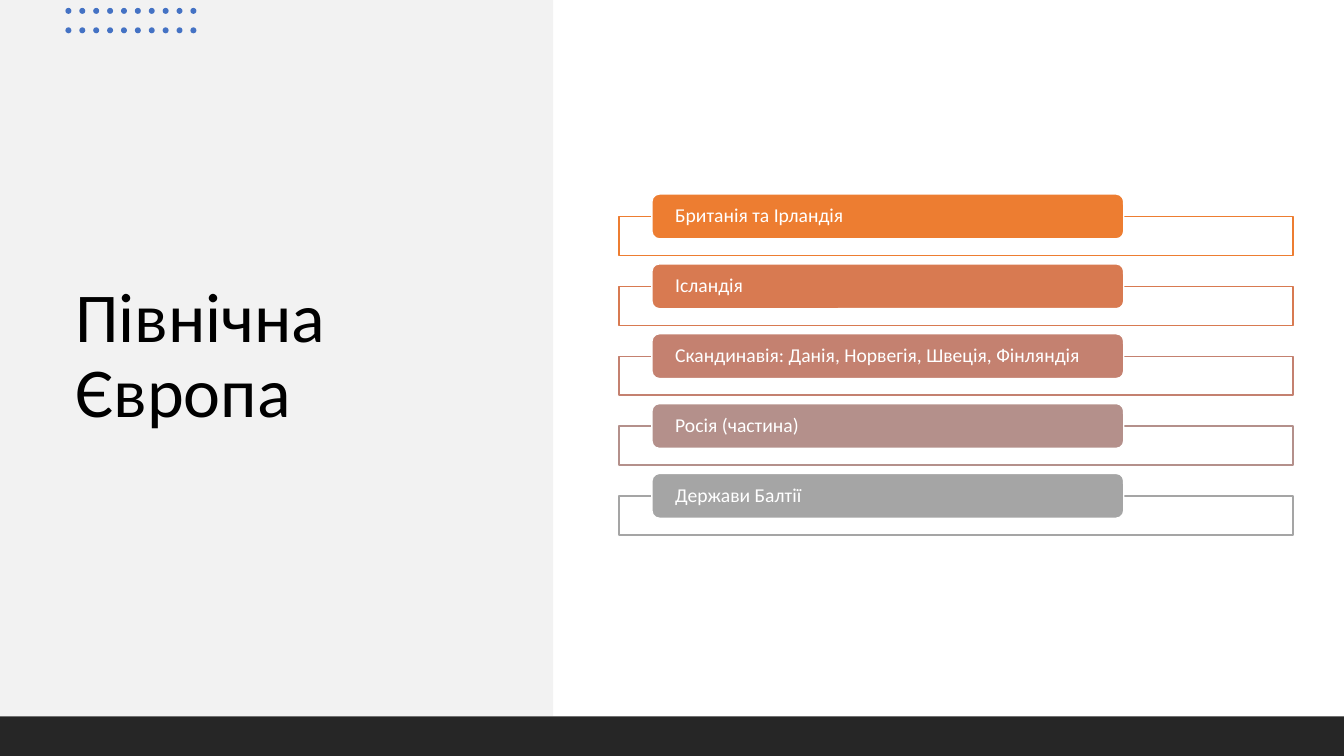
import pptx
import pptx.dml.color
import pptx.enum.shapes
import pptx.enum.text
import pptx.oxml.ns
import pptx.util
from lxml import etree

Cm = pptx.util.Cm
Pt = pptx.util.Pt
RGBColor = pptx.dml.color.RGBColor
SHAPE = pptx.enum.shapes.MSO_SHAPE
ANCHOR = pptx.enum.text.MSO_ANCHOR
ALIGN = pptx.enum.text.PP_ALIGN

BLACK = RGBColor(0x00, 0x00, 0x00)
WHITE = RGBColor(0xFF, 0xFF, 0xFF)
PANEL = RGBColor(0xF2, 0xF2, 0xF2)
FOOTER = RGBColor(0x26, 0x26, 0x26)
BLUE = RGBColor(0x44, 0x72, 0xC4)
ORANGE = RGBColor(0xED, 0x7D, 0x31)
COPPER = RGBColor(0xD8, 0x7A, 0x51)
ROSE = RGBColor(0xC4, 0x81, 0x70)
MAUVE = RGBColor(0xB4, 0x90, 0x8B)
GRAY = RGBColor(0xA5, 0xA5, 0xA5)

REGIONS = [
    ("Британія та Ірландія", ORANGE),
    ("Ісландія", COPPER),
    ("Скандинавія: Данія, Норвегія, Швеція, Фінляндія", ROSE),
    ("Росія (частина)", MAUVE),
    ("Держави Балтії", GRAY),
]


def apply(target, values):
    for name, value in values.items():
        setattr(target, name, value)


class SlideBuilder:
    font = "Calibri"
    frame_format = {"word_wrap": True, "vertical_anchor": ANCHOR.MIDDLE}
    paragraph_format = {"alignment": ALIGN.LEFT, "line_spacing": 0.9}

    def __init__(self, prs):
        self.s = prs.slides.add_slide(prs.slide_layouts[6])

    def group(self):
        return self.s.shapes.add_group_shape().shapes

    def shape(self, kind, box, fill, line=None, shapes=None):
        shapes = self.s.shapes if shapes is None else shapes
        sp = shapes.add_shape(kind, *map(Cm, box))
        sp.shadow.inherit = False
        sp.fill.solid()
        sp.fill.fore_color.rgb = fill
        if line is None:
            sp.line.fill.background()
        else:
            sp.line.color.rgb = line
            sp.line.width = Pt(1)
        return sp

    def put_text(self, sp, text, size, color, margins):
        tf = sp.text_frame
        apply(tf, self.frame_format)
        apply(tf, margins)
        p = tf.paragraphs[0]
        apply(p, self.paragraph_format)
        r = p.add_run()
        r.text = text
        apply(r.font, {"name": self.font, "size": Pt(size)})
        r.font.color.rgb = color

    def title(self, text, box):
        sp = self.s.shapes.add_textbox(*map(Cm, box))
        self.put_text(sp, text, 50, BLACK, {})

    def dots(self, left, top, columns, rows):
        shapes = self.group()
        for col in range(columns):
            for row in range(rows):
                box = (left + col * 0.35, top + row * 0.49, 0.15, 0.15)
                self.shape(SHAPE.OVAL, box, BLUE, shapes=shapes)

    def region_list(self, regions, top, pitch):
        """Draw each region as a filled label over an outlined frame."""
        shapes = self.group()
        margins = {"margin_left": Cm(0.53), "margin_right": Cm(0.53),
                   "margin_top": 0, "margin_bottom": 0}
        for i, (text, color) in enumerate(regions):
            y = top + i * pitch
            frame = self.shape(SHAPE.RECTANGLE, (15.6, y + 0.57, 16.99, 0.98),
                               WHITE, color, shapes)
            self.set_alpha(frame, 90)
            label = self.shape(SHAPE.ROUNDED_RECTANGLE, (16.43, y, 11.89, 1.13),
                               color, WHITE, shapes)
            self.put_text(label, text, 14, WHITE, margins)

    def set_alpha(self, sp, percent):
        """Set the opacity of a solid fill."""
        qn = pptx.oxml.ns.qn
        clr = sp.element.spPr.find(qn("a:solidFill")).find(qn("a:srgbClr"))
        etree.SubElement(clr, qn("a:alpha")).set("val", str(percent * 1000))


def main():
    prs = pptx.Presentation()
    apply(prs, {"slide_width": Cm(33.87), "slide_height": Cm(19.05)})
    slide = SlideBuilder(prs)
    slide.shape(SHAPE.RECTANGLE, (0, 0, 13.94, 18.04), PANEL)
    slide.title("Північна Європа", (1.65, 3.35, 10.77, 11.3))
    slide.dots(1.65, 0.2, columns=10, rows=2)
    slide.shape(SHAPE.RECTANGLE, (0, 18.05, 33.87, 1), FOOTER)
    slide.region_list(REGIONS, top=4.89, pitch=1.76)
    prs.save("out.pptx")


if __name__ == "__main__":
    main()
